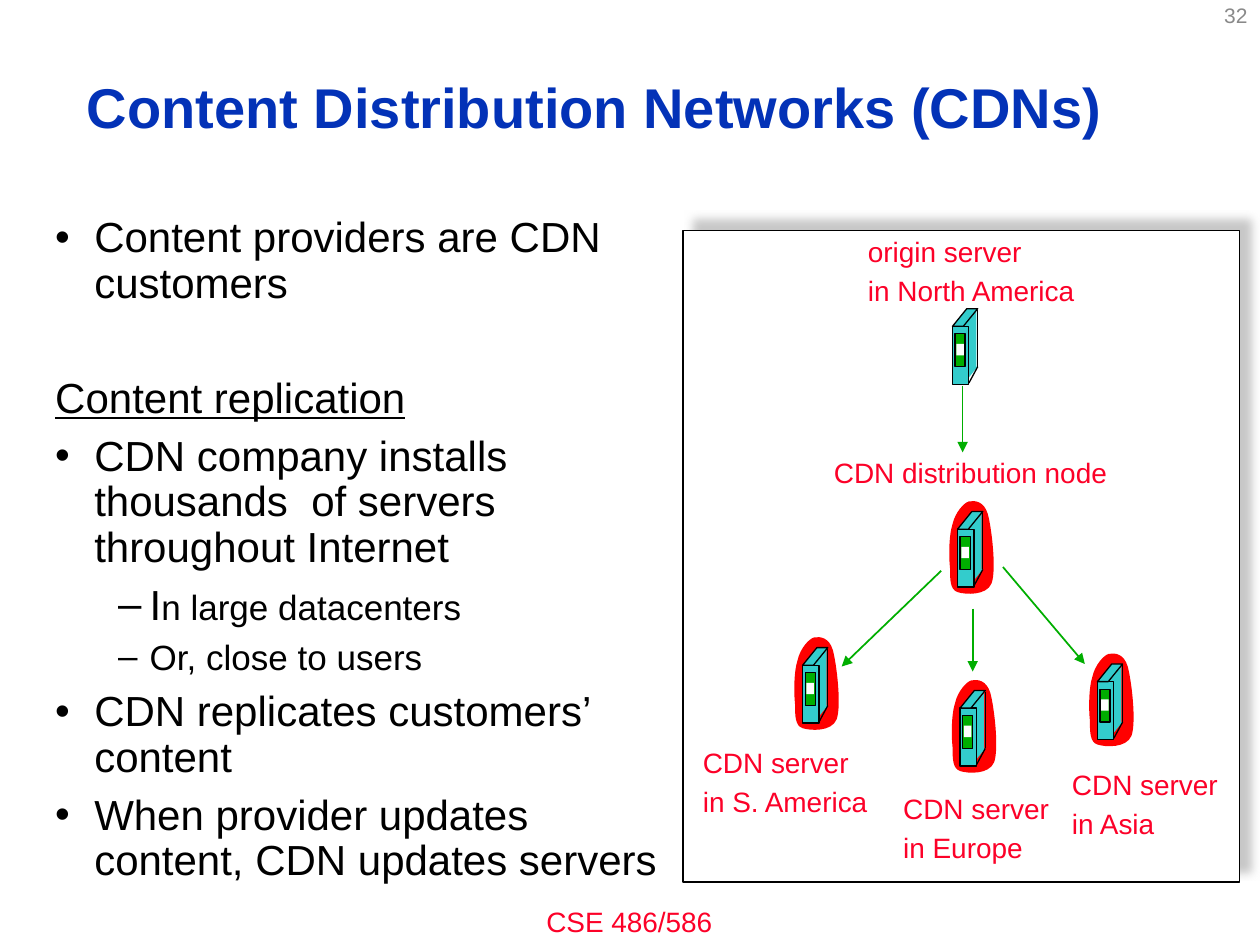
import pptx
import pptx.util
import pptx.dml.color
import pptx.enum.shapes
import pptx.enum.text
import pptx.oxml
import pptx.oxml.ns
from lxml import etree

Inches, Pt = pptx.util.Inches, pptx.util.Pt
RGBColor = pptx.dml.color.RGBColor
SHAPE = pptx.enum.shapes.MSO_SHAPE
ALIGN = pptx.enum.text.PP_ALIGN
ANCHOR = pptx.enum.text.MSO_ANCHOR
qn = pptx.oxml.ns.qn

BLACK, WHITE = RGBColor(0, 0, 0), RGBColor(255, 255, 255)
BLUE, CRIMSON = RGBColor(0x03, 0x32, 0xB7), RGBColor(0xFC, 0x01, 0x28)
TEAL, GREEN = RGBColor(0x33, 0xCC, 0xCC), RGBColor(0, 0xAE, 0)
RED, GRAY = RGBColor(255, 0, 0), RGBColor(0x89, 0x89, 0x89)

# Content
TITLE = "Content Distribution Networks (CDNs)"
FOOTER, PAGE_NUMBER = "CSE 486/586", "32"
# bullet, space before, runs of (text, size)
BODY = [
    ("•", 7.2, [("Content providers are CDN customers", 24)]),
    (None, 40, [("Content replication", 24)]),
    ("•", 7.2, [("CDN company installs thousands  of servers throughout Internet", 24)]),
    ("–", 7.2, [("I", 24), ("n large datacenters", 20)]),
    ("–", 6.2, [("Or, close to users", 20)]),
    ("•", 7.2, [("CDN replicates customers’ content", 24)]),
    ("•", 7.2, [("When provider updates content, CDN updates servers", 24)]),
]
INDENTS = {"•": (0.31, -0.31), None: (0.31, -0.31), "–": (0.75, -0.25)}

# left, top, has a red halo
SERVERS = [
    (7.56, 2.45, False),
    (6.37, 5.14, True),
    (7.62, 5.48, True),
    (8.71, 5.27, True),
    (7.60, 4.06, True),
]
# lines, left, top, width, height
LABELS = [
    (["origin server", "in North America"], 6.79, 1.81, 1.86, 0.69),
    (["CDN distribution node"], 6.52, 3.57, 2.38, 0.37),
    (["CDN server", "in S. America"], 5.48, 5.87, 1.52, 0.69),
    (["CDN server", "in Europe"], 7.07, 6.23, 1.36, 0.69),
    (["CDN server", "in Asia"], 8.41, 6.04, 1.36, 0.69),
]
ARROWS = [
    (7.64, 3.06, 7.64, 3.59),
    (7.47, 4.53, 6.68, 5.29),
    (7.72, 4.83, 7.72, 5.33),
    (7.96, 4.5, 8.61, 5.27),
]

# One server, measured from its top left corner
SERVER_PARTS = [  # shape, left, top, width, height, fill, outlined
    (SHAPE.PARALLELOGRAM, 0, 0.46, 0.2, 0.14, TEAL, False),
    (SHAPE.RECTANGLE, 0.1, 0.01, 0.09, 0.46, TEAL, False),
    (SHAPE.RECTANGLE, 0, 0.14, 0.13, 0.46, TEAL, True),
    (SHAPE.PARALLELOGRAM, 0, 0, 0.2, 0.14, TEAL, True),
    (SHAPE.RECTANGLE, 0.02, 0.2, 0.08, 0.26, GREEN, True),
    (SHAPE.RECTANGLE, 0.03, 0.28, 0.06, 0.09, WHITE, False),
]
SERVER_EDGES = [(0.2, 0.01, 0.2, 0.46), (0.2, 0.46, 0.13, 0.59)]
HALO_START = (-0.04, 0.10)
HALO_CURVES = [  # two control points and an end point each
    ((-0.02, 0.01), (0.05, -0.07), (0.09, -0.08)),
    ((0.14, -0.09), (0.21, -0.08), (0.24, 0.02)),
    ((0.27, 0.13), (0.31, 0.46), (0.27, 0.57)),
    ((0.23, 0.67), (0.06, 0.66), (0, 0.64)),
    ((-0.06, 0.62), (-0.06, 0.54), (-0.06, 0.45)),
    ((-0.07, 0.36), (-0.07, 0.19), (-0.04, 0.10)),
]


def paint(shape, fill, outlined):
    shape.shadow.inherit = False
    shape.fill.solid()
    shape.fill.fore_color.rgb = fill
    if outlined:
        shape.line.color.rgb = BLACK
        shape.line.width = Pt(0.75)
    else:
        shape.line.fill.background()


def add_line(shapes, ends, color, width, arrow=False):
    line = shapes.add_connector(pptx.enum.shapes.MSO_CONNECTOR.STRAIGHT, *map(Inches, ends))
    line.line.color.rgb = color
    line.line.width = Pt(width)
    if arrow:
        etree.SubElement(line.line._get_or_add_ln(), qn("a:tailEnd"), type="triangle")
    etree.SubElement(line._element.spPr, qn("a:effectLst"))


def style(para, size, color, align=ALIGN.LEFT):
    para.alignment = align
    para.font.name, para.font.size = "Arial", Pt(size)
    para.font.color.rgb = color


def add_text(lines, place, size, color, align=ALIGN.LEFT, wrap=True, before=0):
    box = page.shapes.add_textbox(*map(Inches, place))
    frame = box.text_frame
    frame.word_wrap = wrap
    frame.text = "\n".join(lines)
    for para in frame.paragraphs:
        para.space_before = Pt(before)
        style(para, size, color, align)
    return frame


def add_halo(shapes, left, top):
    builder = shapes.build_freeform(Inches(left + HALO_START[0]), Inches(top + HALO_START[1]))
    builder.add_line_segments(
        [(Inches(left + x), Inches(top + y)) for curve in HALO_CURVES for x, y in curve])
    halo = builder.convert_to_shape()
    paint(halo, RED, False)
    # Join every three straight segments into one curve
    segments = list(halo._element.iter(qn("a:lnTo")))
    for first in range(0, len(HALO_CURVES) * 3, 3):
        curve = etree.Element(qn("a:cubicBezTo"))
        segments[first].addprevious(curve)
        for segment in segments[first:first + 3]:
            curve.append(segment[0])
            segment.getparent().remove(segment)


def add_server(left, top, halo):
    shapes = page.shapes.add_group_shape().shapes
    if halo:
        add_halo(shapes, left, top)
    for kind, x, y, width, height, fill, outlined in SERVER_PARTS:
        part = shapes.add_shape(kind, *map(Inches, (left + x, top + y, width, height)))
        if kind == SHAPE.PARALLELOGRAM:
            part.adjustments[0] = 0.814
        paint(part, fill, outlined)
    for x1, y1, x2, y2 in SERVER_EDGES:
        add_line(shapes, (left + x1, top + y1, left + x2, top + y2), BLACK, 0.75)


deck = pptx.Presentation()
deck.slide_width, deck.slide_height = Inches(10), Inches(7.5)
page = deck.slides.add_slide(deck.slide_layouts[5])

# Title
title = page.shapes.title
title.left, title.top, title.width, title.height = map(Inches, (0.59, 0.25, 8.78, 1.25))
title.text_frame.text = TITLE
title.text_frame.vertical_anchor = ANCHOR.MIDDLE
heading = title.text_frame.paragraphs[0]
heading.line_spacing = 0.9
style(heading, 32, BLUE)
heading.font.bold = True

# Footer and page number
add_text([FOOTER], (3.33, 7.13, 3.33, 0.37), 16, CRIMSON, ALIGN.CENTER)
number = add_text([PAGE_NUMBER], (7.67, -0.08, 2.33, 0.4), 12, GRAY, ALIGN.RIGHT)
number.vertical_anchor = ANCHOR.MIDDLE

# Bulleted text
body = page.shapes.add_textbox(*map(Inches, (0.34, 1.67, 5.17, 5.17))).text_frame
body.word_wrap = True
for index, (bullet, before, runs) in enumerate(BODY):
    para = body.add_paragraph() if index else body.paragraphs[0]
    para.level = int(bullet == "–")
    para.line_spacing, para.space_before = 0.9, Pt(before)
    props = para._p.get_or_add_pPr()
    margin, indent = INDENTS[bullet]
    props.set("marL", str(Inches(margin)))
    props.set("indent", str(Inches(indent)))
    if bullet:
        etree.SubElement(props, qn("a:buFont"), typeface="Arial")
        etree.SubElement(props, qn("a:buChar"), char=bullet)
    else:
        etree.SubElement(props, qn("a:buNone"))
    style(para, runs[0][1], BLACK)
    para.font.underline = bullet is None
    for text, size in runs:
        span = para.add_run()
        span.text = text
        if len(runs) > 1:
            span.font.size = Pt(size)

# Diagram panel with its shadow
panel = page.shapes.add_shape(SHAPE.RECTANGLE, *map(Inches, (5.42, 1.83, 4.42, 5.17)))
paint(panel, WHITE, True)
effects = panel._element.spPr.find(qn("a:effectLst"))
shadow = etree.SubElement(effects, qn("a:outerShdw"), blurRad=str(Pt(5)), dist=str(Pt(8.5)),
                          dir=str(315 * 60000), algn="ctr", rotWithShape="0")
tint = etree.SubElement(shadow, qn("a:srgbClr"), val="919191")
etree.SubElement(tint, qn("a:alpha"), val="50000")

# Servers, labels and arrows
for server in SERVERS:
    add_server(*server)
for lines, *place in LABELS:
    add_text(lines, place, 16, CRIMSON, wrap=False, before=3.2)
for ends in ARROWS:
    add_line(page.shapes, ends, GREEN, 1, arrow=True)

deck.save("out.pptx")
